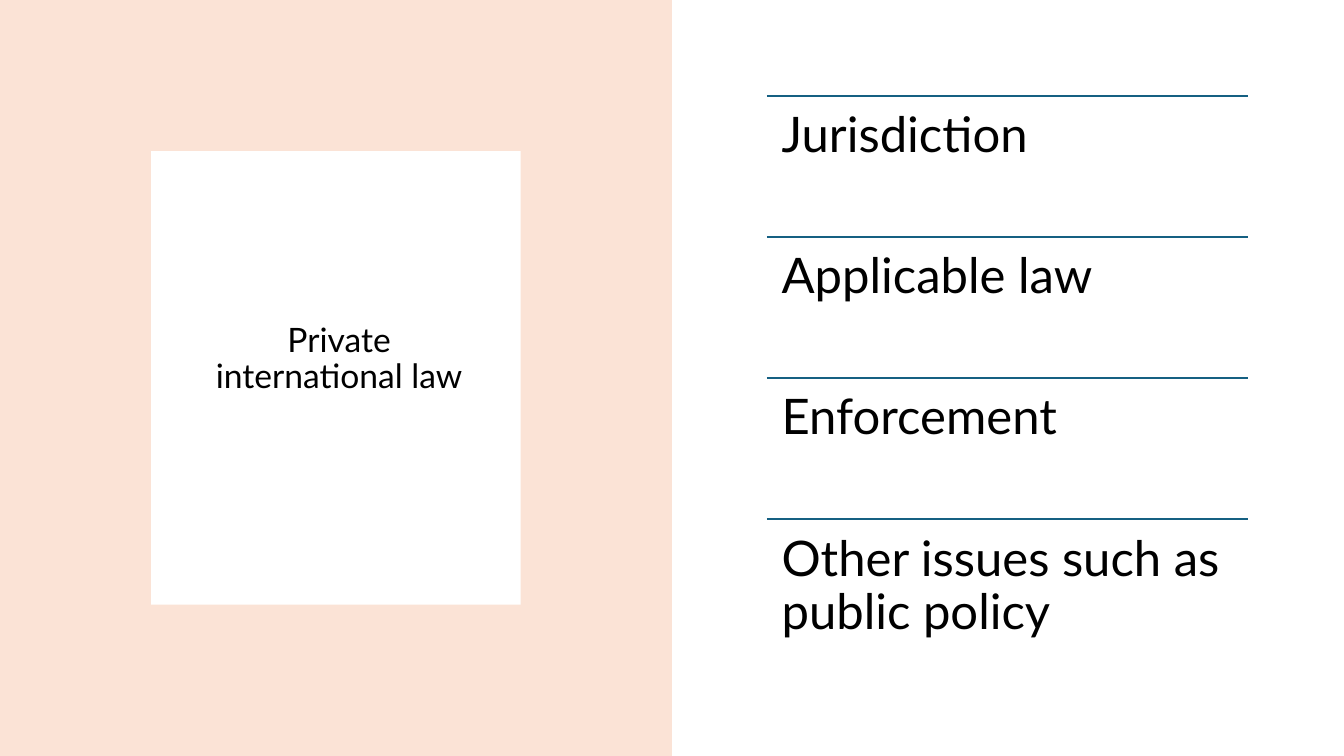
import pptx
import pptx.dml.color
import pptx.enum.shapes
import pptx.enum.text
import pptx.oxml.ns
import pptx.util
from lxml import etree

Pt = pptx.util.Pt
ALIGN = pptx.enum.text.PP_ALIGN
ANCHOR = pptx.enum.text.MSO_ANCHOR
TOPICS = [
    "Jurisdiction",
    "Applicable law",
    "Enforcement",
    "Other issues such as public policy",
]
LIST_LEFT, LIST_TOP, LIST_WIDTH, ROW_HEIGHT = 547.8, 68.4, 343.6, 100.8


def color(hex_string):
    """Return the RGB colour for a hex string."""
    return pptx.dml.color.RGBColor.from_string(hex_string)


def apply_format(target, values):
    """Set each named attribute of the target."""
    for name, value in values.items():
        setattr(target, name, value)


def add_panel(slide, left, top, width, height, fill):
    """Add a borderless filled rectangle."""
    shape = slide.shapes.add_shape(
        pptx.enum.shapes.MSO_SHAPE.RECTANGLE, Pt(left), Pt(top), Pt(width), Pt(height)
    )
    shape.shadow.inherit = False
    shape.fill.solid()
    shape.fill.fore_color.rgb = color(fill)
    shape.line.fill.background()


def write_text(shape, text, size, frame_format, alignment):
    """Write one formatted paragraph into the shape."""
    frame = shape.text_frame
    frame.text = text
    apply_format(frame, {
        "word_wrap": True,
        "auto_size": pptx.enum.text.MSO_AUTO_SIZE.NONE,
        **frame_format,
    })
    paragraph = frame.paragraphs[0]
    apply_format(paragraph, {"alignment": alignment, "line_spacing": 0.9})
    font = paragraph.runs[0].font
    apply_format(font, {"name": "Lato", "size": Pt(size)})
    font.color.rgb = color("000000")


def place_title(slide, text):
    """Place the title above the panels, slightly over the middle."""
    title = slide.shapes.title
    apply_format(title, {
        "left": Pt(141.8), "top": Pt(142.6), "width": Pt(200.9), "height": Pt(254.9),
    })
    frame_format = {"vertical_anchor": ANCHOR.MIDDLE, "margin_bottom": Pt(30)}
    write_text(title, text, 24, frame_format, ALIGN.CENTER)
    title.element.getparent().append(title.element)


def add_rule(group, left, top, width):
    """Add a horizontal line without a shadow."""
    rule = group.shapes.add_connector(
        pptx.enum.shapes.MSO_CONNECTOR.STRAIGHT,
        Pt(left), Pt(top), Pt(left + width), Pt(top),
    )
    rule.line.color.rgb = color("156082")
    rule.line.width = Pt(1.5)
    properties = rule.element.find(pptx.oxml.ns.qn("p:spPr"))
    etree.SubElement(properties, pptx.oxml.ns.qn("a:effectLst"))


def add_topic(group, text, top):
    """Add a topic below its rule."""
    add_rule(group, LIST_LEFT, top, LIST_WIDTH)
    box = group.shapes.add_textbox(
        Pt(LIST_LEFT), Pt(top), Pt(LIST_WIDTH), Pt(ROW_HEIGHT)
    )
    sides = ("left", "top", "right", "bottom")
    frame_format = {f"margin_{side}": Pt(10.5) for side in sides}
    frame_format["vertical_anchor"] = ANCHOR.TOP
    write_text(box, text, 35, frame_format, ALIGN.LEFT)


def main():
    """Build the slide and save it."""
    presentation = pptx.Presentation()
    presentation.slide_width = Pt(960)
    presentation.slide_height = Pt(540)
    slide = presentation.slides.add_slide(presentation.slide_layouts[5])
    add_panel(slide, 0, 0, 480, 540, "FBE3D6")
    add_panel(slide, 108, 108, 264, 324, "FFFFFF")
    place_title(slide, "Private international law")
    group = slide.shapes.add_group_shape()
    for index, topic in enumerate(TOPICS):
        add_topic(group, topic, LIST_TOP + index * ROW_HEIGHT)
    presentation.save("out.pptx")


if __name__ == "__main__":
    main()
